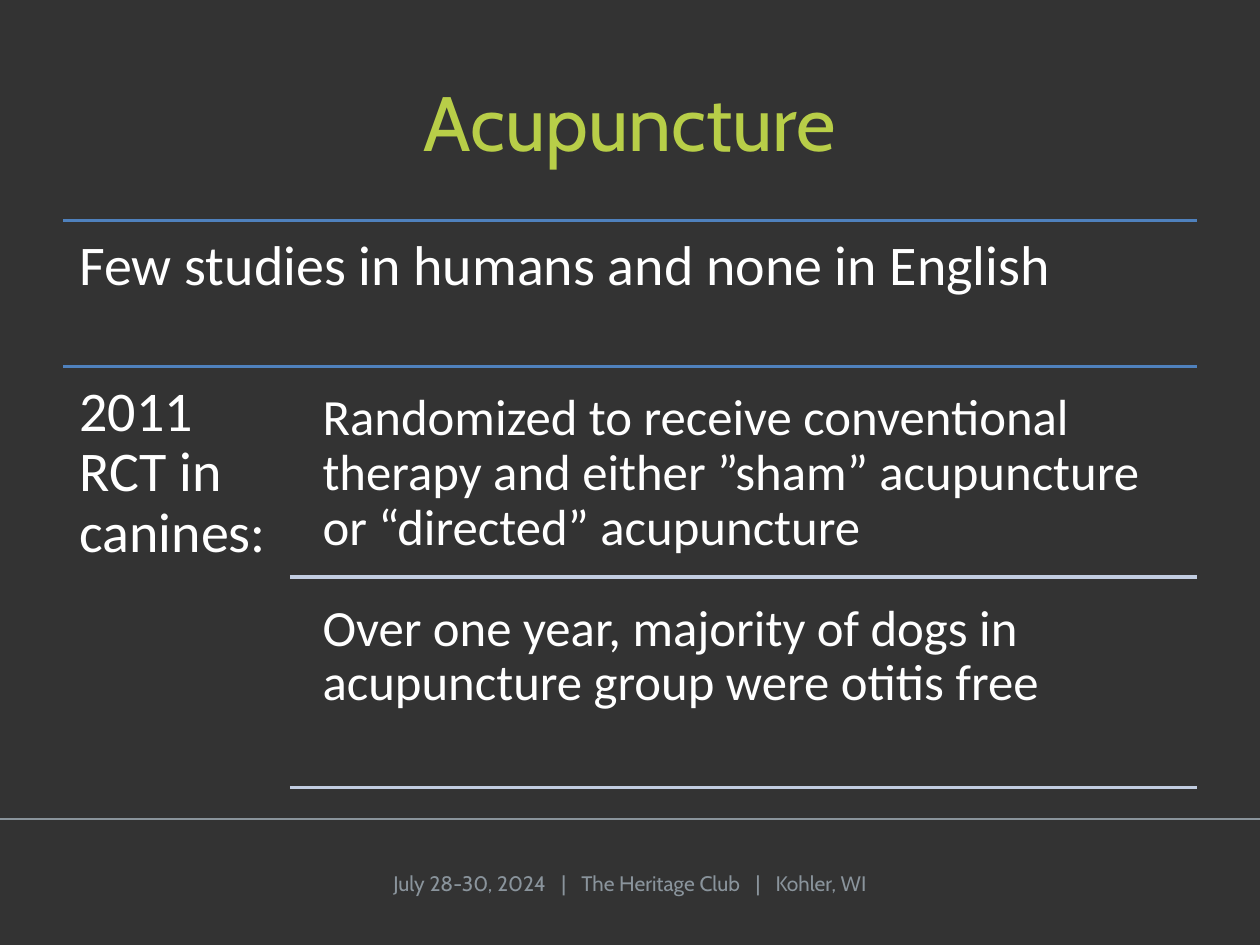
from pptx import Presentation
from pptx import util as u
from pptx.dml.color import RGBColor
from pptx.enum import shapes, text
from pptx.oxml.ns import qn
from lxml import etree

COLS, ROWS = 20, 15
WHITE, LIME, GREY, BLUE, PALE = "FFFFFF", "B8CE48", "8A949C", "4F81BD", "C2CDE1"


def rgb(value):
    return RGBColor.from_string(value)


class Deck:
    """Places elements on a grid of COLS by ROWS cells."""

    def __init__(self, background):
        self.prs = Presentation()
        self.prs.slide_width, self.prs.slide_height = u.Inches(10), u.Inches(7.5)
        self.s = self.prs.slides.add_slide(self.prs.slide_layouts[6])
        fill = self.s.background.fill
        fill.solid()
        fill.fore_color.rgb = rgb(background)

    def x(self, cols):
        return round(self.prs.slide_width * cols / COLS)

    def y(self, rows):
        return round(self.prs.slide_height * rows / ROWS)

    def rule(self, left, right, row, color, width=2):
        sp = self.s.shapes.add_connector(
            shapes.MSO_CONNECTOR.STRAIGHT,
            self.x(left), self.y(row), self.x(right), self.y(row))
        sp.line.color.rgb = rgb(color)
        sp.line.width = u.Pt(width)
        etree.SubElement(sp._element.spPr, qn("a:effectLst"))

    def box(self, left, top, width, height):
        sp = self.s.shapes.add_textbox(
            self.x(left), self.y(top), self.x(width), self.y(height))
        sp.text_frame.word_wrap = True
        return sp.text_frame

    def style(self, p, font, size, color):
        for r in p.runs:
            r.font.name, r.font.size = font, u.Pt(size)
            r.font.color.rgb = rgb(color)

    def heading(self, words, left, top, width, height):
        tf = self.box(left, top, width, height)
        tf.text = words
        tf.vertical_anchor = text.MSO_ANCHOR.MIDDLE
        p = tf.paragraphs[0]
        p.alignment = text.PP_ALIGN.CENTER
        self.style(p, "Cabin", 44, LIME)

    def body(self, words, left, top, width, height, size, inset):
        tf = self.box(left, top, width, height)
        tf.text = words
        tf.margin_left = tf.margin_right = u.Inches(inset)
        tf.margin_top = tf.margin_bottom = u.Inches(inset)
        p = tf.paragraphs[0]
        p.line_spacing = 0.9
        self.style(p, "Calibri", size, WHITE)

    def footer(self, parts, left, top, width, height):
        """Joins the parts with bars whose spaces are widened by tracking."""
        tf = self.box(left, top, width, height)
        tf.vertical_anchor = text.MSO_ANCHOR.MIDDLE
        p = tf.paragraphs[0]
        p.alignment = text.PP_ALIGN.CENTER
        for i, part in enumerate(parts):
            for piece in ([" ", "|", " "] if i else []) + [part]:
                r = p.add_run()
                r.text = piece
                if piece == " ":
                    r.font._element.set("spc", "600")
        self.style(p, "Cabin", 12, GREY)


def main():
    d = Deck("333333")
    left, right = 1, 19
    top, split, bottom = 3.5, 5.82, 12.5
    detail_left, gap = 4.6, 0.16
    details = [
        "Randomized to receive conventional therapy and either ”sham” "
        "acupuncture or “directed” acupuncture",
        "Over one year, majority of dogs in acupuncture group were otitis free",
    ]
    step = (bottom - split) / len(details)

    d.rule(0, COLS, 13, GREY, 0.75)
    d.heading("Acupuncture", left, 0.66, right - left, 2.5)

    d.rule(left, right, top, BLUE)
    d.body("Few studies in humans and none in English",
           left, top, right - left, split - top, 32, 0.13)
    d.rule(left, right, split, BLUE)
    d.body("2011 RCT in canines:",
           left, split, detail_left - left, bottom - split, 32, 0.13)

    for i, words in enumerate(details):
        row = split + i * step
        d.body(words, 4.88, row + gap, 14.14, step - gap, 29, 0.12)
        d.rule(detail_left, right, row + step, PALE)

    d.footer(["July 28-30, 2024", "The Heritage Club", "Kohler, WI"],
             5.5, 13.62, 9, 0.8)
    d.prs.save("out.pptx")


if __name__ == "__main__":
    main()
